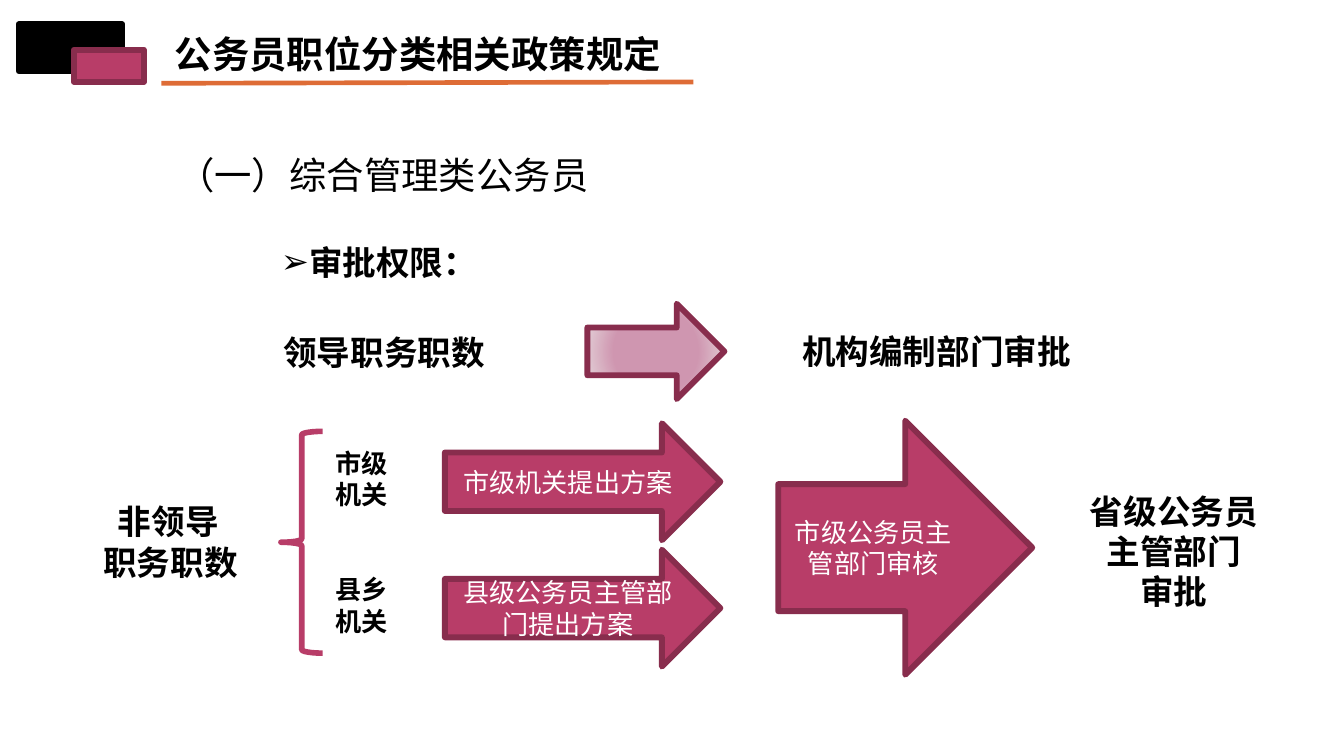
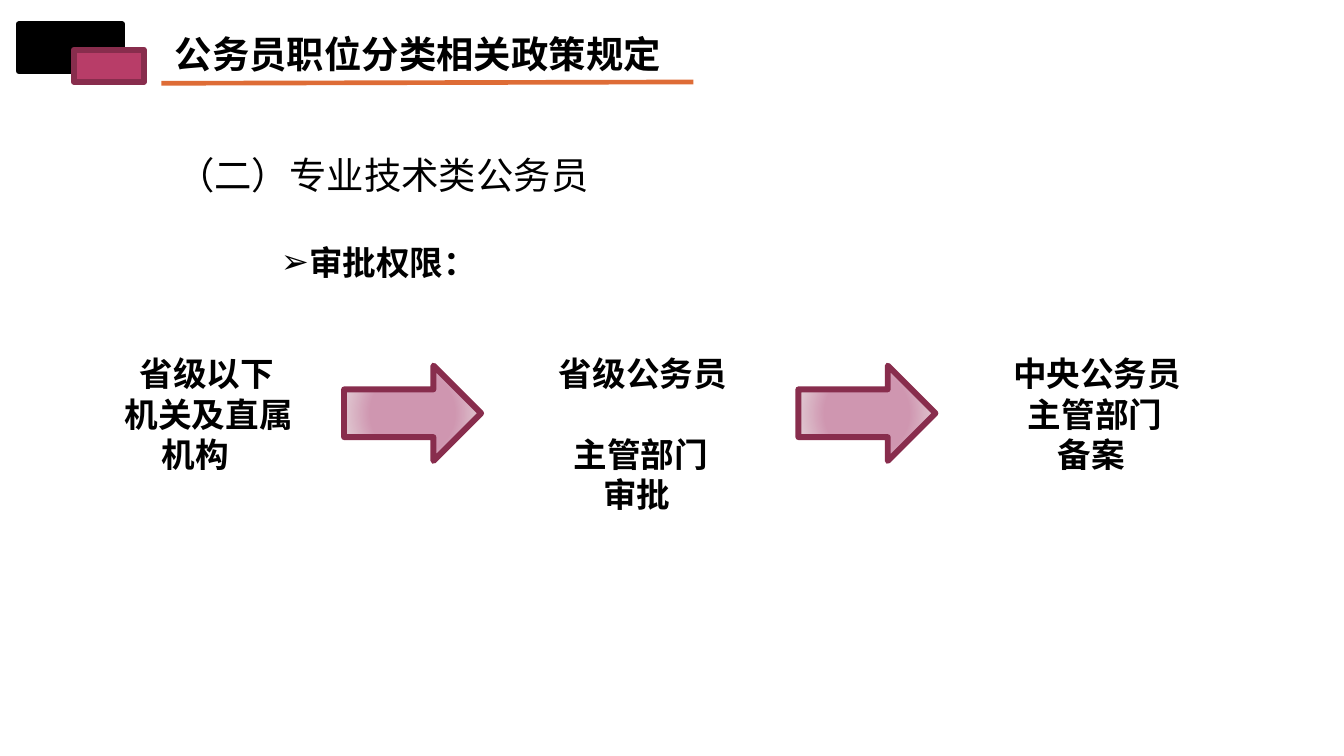
from lxml import etree
from pptx import Presentation
from pptx.dml.color import RGBColor
from pptx.enum import shapes, text
from pptx.oxml import ns, parse_xml
from pptx.util import Inches, Pt

BLACK = RGBColor(0x00, 0x00, 0x00)
WHITE = RGBColor(0xFF, 0xFF, 0xFF)
ROSE = RGBColor(0xB8, 0x3D, 0x68)
WINE = RGBColor(0x88, 0x2D, 0x4D)
ORANGE = RGBColor(0xDE, 0x6C, 0x36)
PALE_ROSE = RGBColor(0xCF, 0x96, 0xB0)
PALE_GREY = RGBColor(0xE9, 0xE2, 0xE3)

SANS = "Noto Sans CJK SC"
LATIN = "Arial"
LEFT = text.PP_ALIGN.LEFT
CENTER = text.PP_ALIGN.CENTER
JUSTIFY = text.PP_ALIGN.JUSTIFY
ARROW = shapes.MSO_SHAPE.RIGHT_ARROW
RECTANGLE = shapes.MSO_SHAPE.RECTANGLE
SPACE = 0.055
LINE_HEIGHT = 21.6


def style_paragraph(para, size, name=LATIN, bold=True, color=BLACK, align=LEFT):
    para.alignment = align
    font = para.font
    font.size, font.name, font.bold = Pt(size), name, bold
    font.color.rgb = color
    defaults = para._p.pPr.find(ns.qn("a:defRPr"))
    etree.SubElement(defaults, ns.qn("a:ea")).set("typeface", SANS)


def place(shape, at):
    shape.left, shape.top, shape.width, shape.height = map(Inches, at)


def fill_placeholder(holder, at, words):
    place(holder, at)
    frame = holder.text_frame
    frame.word_wrap = True
    frame.auto_size = text.MSO_AUTO_SIZE.NONE
    frame.vertical_anchor = text.MSO_ANCHOR.TOP
    frame.text = words
    para = frame.paragraphs[0]
    para.space_before = Pt(0)
    return para


def add_label(page, at, lines, size=18, bold=True, align=LEFT):
    box = page.shapes.add_textbox(*map(Inches, at))
    frame = box.text_frame
    frame.word_wrap = True
    for index, (words, spaces) in enumerate(lines):
        para = frame.paragraphs[0] if index == 0 else frame.add_paragraph()
        para.text = words
        if spaces:
            para._p.get_or_add_pPr().set("marL", str(Inches(spaces * SPACE)))
        style_paragraph(para, size, bold=bold, align=align)
    return frame


def add_block(page, kind, at, fill=ROSE, line=WINE, width=3.15):
    block = page.shapes.add_shape(kind, *map(Inches, at))
    block.shadow.inherit = False
    if fill is None:
        block.fill.background()
    else:
        block.fill.solid()
        block.fill.fore_color.rgb = fill
    block.line.color.rgb = line
    block.line.width = Pt(width)
    return block


def add_step_arrow(page, at, words):
    frame = add_block(page, ARROW, at).text_frame
    frame.word_wrap = True
    frame.vertical_anchor = text.MSO_ANCHOR.MIDDLE
    frame.text = words
    style_paragraph(frame.paragraphs[0], 14, SANS, False, WHITE, CENTER)


def add_pale_arrow(page, left, top):
    arrow = add_block(page, ARROW, (left, top, 1.02, 0.71), fill=None)
    gradient = parse_xml(
        f'<a:gradFill {ns.nsdecls("a")} rotWithShape="1"><a:gsLst>'
        f'<a:gs pos="50000"><a:srgbClr val="{PALE_ROSE}"/></a:gs>'
        f'<a:gs pos="100000"><a:srgbClr val="{PALE_GREY}"/></a:gs></a:gsLst>'
        '<a:path path="circle"><a:fillToRect l="50000" t="50000" r="50000" b="50000"/>'
        '</a:path></a:gradFill>')
    props = arrow._element.spPr
    props.replace(props.find(ns.qn("a:noFill")), gradient)


def add_underline(page):
    line = page.shapes.add_connector(
        shapes.MSO_CONNECTOR.STRAIGHT, *map(Inches, (1.2, 0.62, 5.16, 0.61)))
    line.line.color.rgb = ORANGE
    line.line.width = Pt(2.5)
    etree.SubElement(line._element.spPr, ns.qn("a:effectLst"))


def add_page(deck, section):
    page = deck.slides.add_slide(deck.slide_layouts[1])
    add_block(page, RECTANGLE, (0.14, 0.18, 0.77, 0.35), BLACK, BLACK)
    add_block(page, RECTANGLE, (0.55, 0.37, 0.52, 0.24))
    add_underline(page)
    title = fill_placeholder(page.shapes.title, (1.2, 0.18, 4.39, 0.44),
                             "公务员职位分类相关政策规定")
    style_paragraph(title, 20, SANS)
    add_label(page, (1.22, 1.08, 5.12, 0.44), [(section, 0)], 20, False)
    item = fill_placeholder(page.placeholders[1], (1.54, 1.63, 6.85, 0.46), "审批权限：")
    item.line_spacing = Pt(30)
    props = item._p.get_or_add_pPr()
    props.set("marL", "0")
    props.set("indent", str(Inches(0.45)))
    etree.SubElement(props, ns.qn("a:buChar")).set("char", "➢")
    style_paragraph(item, 18, SANS, align=JUSTIFY)
    return page


def build_general_page(deck):
    page = add_page(deck, "（一）综合管理类公务员")
    add_pale_arrow(page, 4.37, 2.26)
    add_label(page, (2.01, 2.42, 2.13, 0.4), [("领导职务职数", 0)])
    add_label(page, (5.87, 2.41, 2.83, 0.4), [("机构编制部门审批", 0)])
    add_label(page, (0.67, 3.68, 1.26, 0.71), [("非领导", 2), ("职务职数", 0)])
    add_block(page, shapes.MSO_SHAPE.LEFT_BRACE, (2.09, 3.21, 0.31, 1.65), None, ROSE, 3)
    levels = [("市级机关", "市级机关提出方案"),
              ("县乡机关", "县级公务员主管部门提出方案")]
    for row, (level, proposal) in enumerate(levels):
        offset = row * 0.94
        add_step_arrow(page, (3.31, 3.15 + offset, 2.05, 0.87), proposal)
        add_label(page, (2.4, 3.28 + offset, 0.63, 0.57), [(level, 0)], 14)
    add_step_arrow(page, (5.79, 3.13, 1.89, 1.89), "市级公务员主管部门审核")
    add_label(page, (7.91, 3.6, 1.65, 1.01),
              [("省级公务员主管部门", 0), ("审批", 0)], align=CENTER)


def build_technical_page(deck):
    page = add_page(deck, "（二）专业技术类公务员")
    add_label(page, (0.83, 2.58, 1.57, 1.01),
              [("省级以下", 2), ("机关及直属", 0), ("机构", 5)])
    approval = add_label(page, (4.06, 2.58, 1.5, 1.01),
                         [("省级公务员", 0), ("主管部门", 2), ("审批", 6)])
    approval.paragraphs[1].space_before = Pt(LINE_HEIGHT)
    for left in (2.56, 5.94):
        add_pale_arrow(page, left, 2.72)
    add_label(page, (7.44, 2.58, 1.65, 1.01),
              [("中央公务员", 0), ("主管部门", 2), ("备案", 6)])


def main():
    deck = Presentation()
    deck.slide_width, deck.slide_height = Inches(10), Inches(10 * 9 / 16)
    build_general_page(deck)
    build_technical_page(deck)
    deck.save("out.pptx")


if __name__ == "__main__":
    main()
